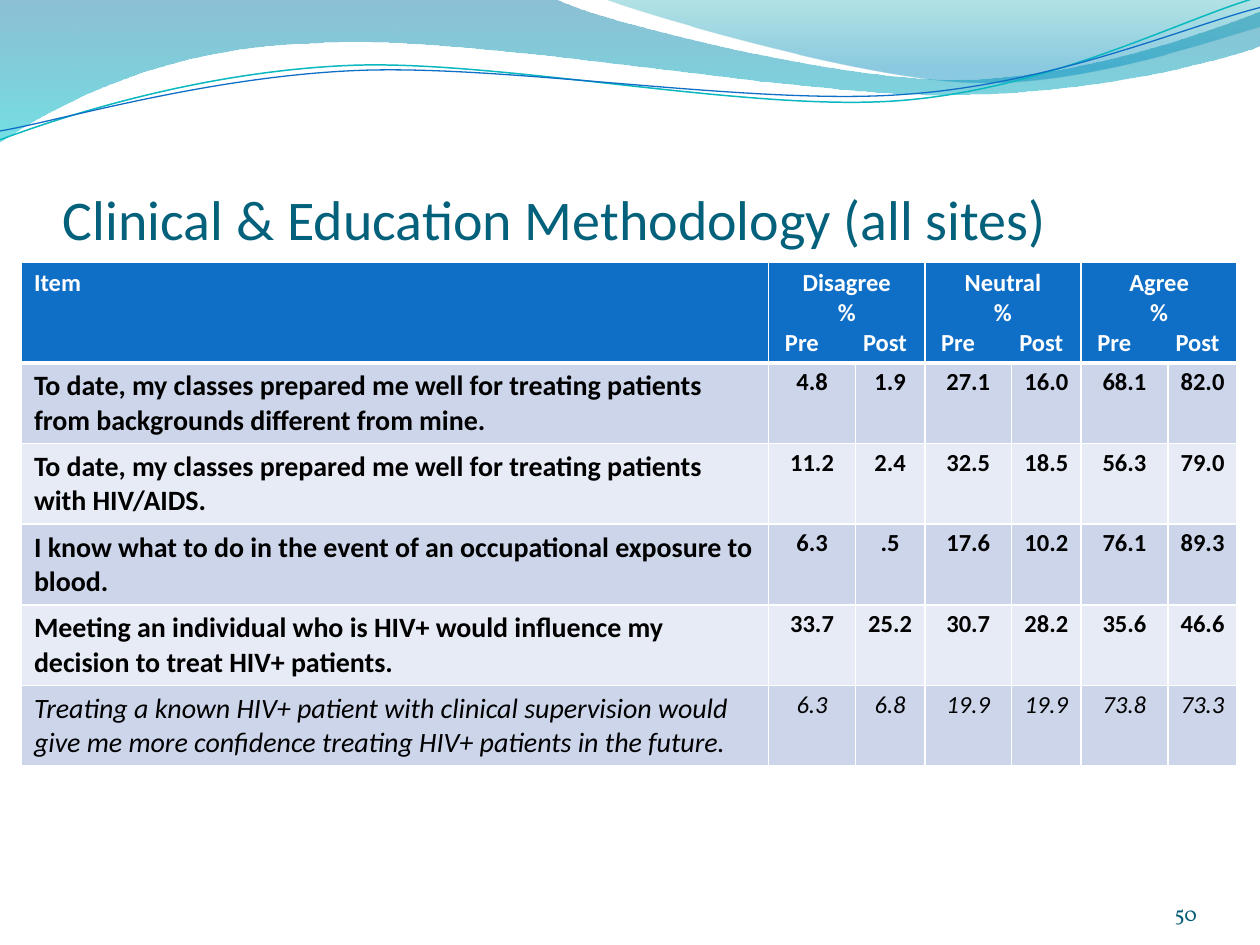
from lxml.etree import SubElement
from pptx import Presentation
from pptx.dml.color import RGBColor
from pptx.enum.text import MSO_ANCHOR, PP_ALIGN
from pptx.oxml.ns import qn
from pptx.util import Inches, Pt

WIDTH, HEIGHT = 10, 7.5
BLUE, WHITE, BLACK = "0F6FC6", "FFFFFF", "000000"
BANDS = "CCD5EA", "E7EBF5"
ITEM_WIDTH, PRE_WIDTH, POST_WIDTH = 5.93, 0.69, 0.55
HEADER_HEIGHT, ROW_HEIGHT = 0.8, 0.64
ANSWERS = "Disagree", "Neutral", "Agree"
ITEMS = [
    ("To date, my classes prepared me well for treating patients from backgrounds different from mine.",
     "4.8 1.9 27.1 16.0 68.1 82.0"),
    ("To date, my classes prepared me well for treating patients with HIV/AIDS.",
     "11.2 2.4 32.5 18.5 56.3 79.0"),
    ("I know what to do in the event of an occupational exposure to blood.",
     "6.3 .5 17.6 10.2 76.1 89.3"),
    ("Meeting an individual who is HIV+ would influence my decision to treat HIV+ patients.",
     "33.7 25.2 30.7 28.2 35.6 46.6"),
    ("Treating a known HIV+ patient with clinical supervision would give me more confidence "
     "treating HIV+ patients in the future.",
     "6.3 6.8 19.9 19.9 73.8 73.3"),
]

# Each step holds one point (straight) or two controls and an end point (curve).
WAVES = [
    ([(0, -0.01), (4.4, -0.01), (4.76, 0.17, 6.64, 0.63, 7.58, 0.63),
      (8.53, 0.63, 9.58, 0.26, 10, 0.09), (10.01, 0.36),
      (9.83, 0.44, 8.7, 0.76, 7.46, 0.75), (6.22, 0.75, 3.82, 0.28, 2.57, 0.34),
      (1.29, 0.36, 0.46, 0.83, -0.01, 1.13)],
     [(0, "0074A1", 45), (1, "00C6CF", 55)]),
    ([(4.79, -0.01), (5.09, 0.11, 6.82, 0.62, 7.69, 0.65),
      (8.56, 0.69, 9.61, 0.32, 10, 0.21), (10, 0)],
     [(0, "00A1A9", 30), (0.8, "008BBF", 45)]),
]
STRANDS = [
    ([(0, 1.11), (0.48, 0.93, 1.58, 0.57, 2.77, 0.52),
      (3.95, 0.47, 5.93, 0.89, 7.13, 0.8), (8.33, 0.71, 9.38, 0.15, 9.98, -0.02)],
     "0AB8BF", 0.85),
    ([(0, 1.04), (0.47, 0.96, 1.64, 0.61, 2.83, 0.56),
      (4.03, 0.51, 5.97, 0.84, 7.17, 0.75), (8.36, 0.67, 9.41, 0.21, 10, 0.06)],
     BLUE, 0.75),
]


def color(hex_code):
    return RGBColor.from_string(hex_code)


def add_outline(slide, steps, close):
    """Draw straight segments between the end points, then bend the curved ones."""
    ends = [(Inches(step[-2]), Inches(step[-1])) for step in steps]
    builder = slide.shapes.build_freeform(*ends[0])
    builder.add_line_segments(ends[1:], close=close)
    shape = builder.convert_to_shape()
    shape.shadow.inherit = False
    segments = list(shape.element.iter(qn("a:lnTo")))
    for segment, step in zip(segments, steps[1:]):
        if len(step) == 2:
            continue
        segment.tag = qn("a:cubicBezTo")
        segment.remove(segment[0])
        for x, y in zip(step[::2], step[1::2]):
            SubElement(segment, qn("a:pt"), x=str(Inches(x) - shape.left),
                       y=str(Inches(y) - shape.top))
    return shape


def add_wave(slide, steps, stops):
    shape = add_outline(slide, steps, close=True)
    shape.line.fill.background()
    shape.fill.gradient()
    shape.fill.gradient_angle = 270
    for stop, (position, hex_code, _) in zip(shape.fill.gradient_stops, stops):
        stop.position = position
        stop.color.rgb = color(hex_code)
    for element, (_, _, opacity) in zip(shape.element.iter(qn("a:gs")), stops):
        SubElement(element[0], qn("a:alpha"), val=str(opacity * 1000))


def add_strand(slide, steps, hex_code, width):
    shape = add_outline(slide, steps, close=False)
    shape.fill.background()
    shape.line.color.rgb = color(hex_code)
    shape.line.width = Pt(width)


def format_runs(paragraph, size, hex_code, font="Calibri", bold=False, italic=False):
    for run in paragraph.runs:
        run.font.name = font
        run.font.size = Pt(size)
        run.font.color.rgb = color(hex_code)
        run.font.bold = bold
        run.font.italic = italic


def add_label(slide, text, box, size, hex_code, font, alignment):
    shape = slide.shapes.add_textbox(*map(Inches, box))
    frame = shape.text_frame
    frame.word_wrap = True
    frame.vertical_anchor = MSO_ANCHOR.BOTTOM
    frame.margin_left = frame.margin_right = frame.margin_top = frame.margin_bottom = 0
    frame.text = text
    frame.paragraphs[0].alignment = alignment
    format_runs(frame.paragraphs[0], size, hex_code, font)


def style_cell(cell, fill, top=1, bottom=1):
    """Give a cell white borders, then its fill."""
    properties = cell._tc.get_or_add_tcPr()
    for side, width in zip("LRTB", (1, 1, top, bottom)):
        line = SubElement(properties, qn(f"a:ln{side}"), w=str(Pt(width)))
        SubElement(SubElement(line, qn("a:solidFill")), qn("a:srgbClr"), val=WHITE)
    cell.fill.solid()
    cell.fill.fore_color.rgb = color(fill)


def fill_answer_header(cell, answer):
    cell.margin_left = cell.margin_right = Inches(0.13)
    cell.text_frame.text = f"{answer}\n%\nPre\tPost"
    for paragraph in cell.text_frame.paragraphs:
        paragraph.alignment = PP_ALIGN.CENTER
        format_runs(paragraph, 14, WHITE, bold=True)
    paragraph.alignment = PP_ALIGN.LEFT
    tabs = SubElement(paragraph._p.get_or_add_pPr(), qn("a:tabLst"))
    SubElement(tabs, qn("a:tab"), pos=str(Inches(0.62)), algn="l")


def fill_value(cell, value, **style):
    cell.margin_left = cell.margin_right = Inches(0.07)
    cell.margin_top = cell.margin_bottom = 0
    cell.text_frame.text = value
    paragraph = cell.text_frame.paragraphs[0]
    paragraph.alignment = PP_ALIGN.CENTER
    paragraph.line_spacing = 1.15
    format_runs(paragraph, 14, BLACK, **style)


def fill_item(cell, text, size, hex_code, **style):
    cell.text_frame.text = text
    format_runs(cell.text_frame.paragraphs[0], size, hex_code, **style)


def add_survey_table(slide):
    widths = [ITEM_WIDTH] + [PRE_WIDTH, POST_WIDTH] * len(ANSWERS)
    heights = [HEADER_HEIGHT] + [ROW_HEIGHT] * len(ITEMS)
    box = map(Inches, (0.17, 2.08, sum(widths), sum(heights)))
    table = slide.shapes.add_table(len(heights), len(widths), *box).table
    for column, width in zip(table.columns, widths):
        column.width = Inches(width)
    for row, height in zip(table.rows, heights):
        row.height = Inches(height)

    for cell in table.rows[0].cells:
        style_cell(cell, BLUE, bottom=3)
    fill_item(table.cell(0, 0), "Item", 14, WHITE, bold=True)
    for index, answer in enumerate(ANSWERS):
        first = 1 + 2 * index
        table.cell(0, first).merge(table.cell(0, first + 1))
        fill_answer_header(table.cell(0, first), answer)

    for row, (item, values) in enumerate(ITEMS, 1):
        is_last = row == len(ITEMS)
        style = {"bold": not is_last, "italic": is_last}
        for cell in table.rows[row].cells:
            style_cell(cell, BANDS[(row - 1) % 2], top=3 if row == 1 else 1)
        fill_item(table.cell(row, 0), item, 16, BLACK, **style)
        for column, value in enumerate(values.split(), 1):
            fill_value(table.cell(row, column), value, **style)


def main():
    presentation = Presentation()
    presentation.slide_width, presentation.slide_height = Inches(WIDTH), Inches(HEIGHT)
    slide = presentation.slides.add_slide(presentation.slide_layouts[6])
    for wave in WAVES:
        add_wave(slide, *wave)
    for strand in STRANDS:
        add_strand(slide, *strand)
    add_label(slide, "Clinical & Education Methodology (all sites)",
              (0.05 * WIDTH, 1.08, 0.9 * WIDTH, 0.92), 32, "04617B", "Calibri", PP_ALIGN.LEFT)
    add_survey_table(slide)
    add_label(slide, "50", (8.67, 6.95, 0.83, 0.4), 12, "045D75", "Vollkorn", PP_ALIGN.RIGHT)
    presentation.save("out.pptx")


if __name__ == "__main__":
    main()
